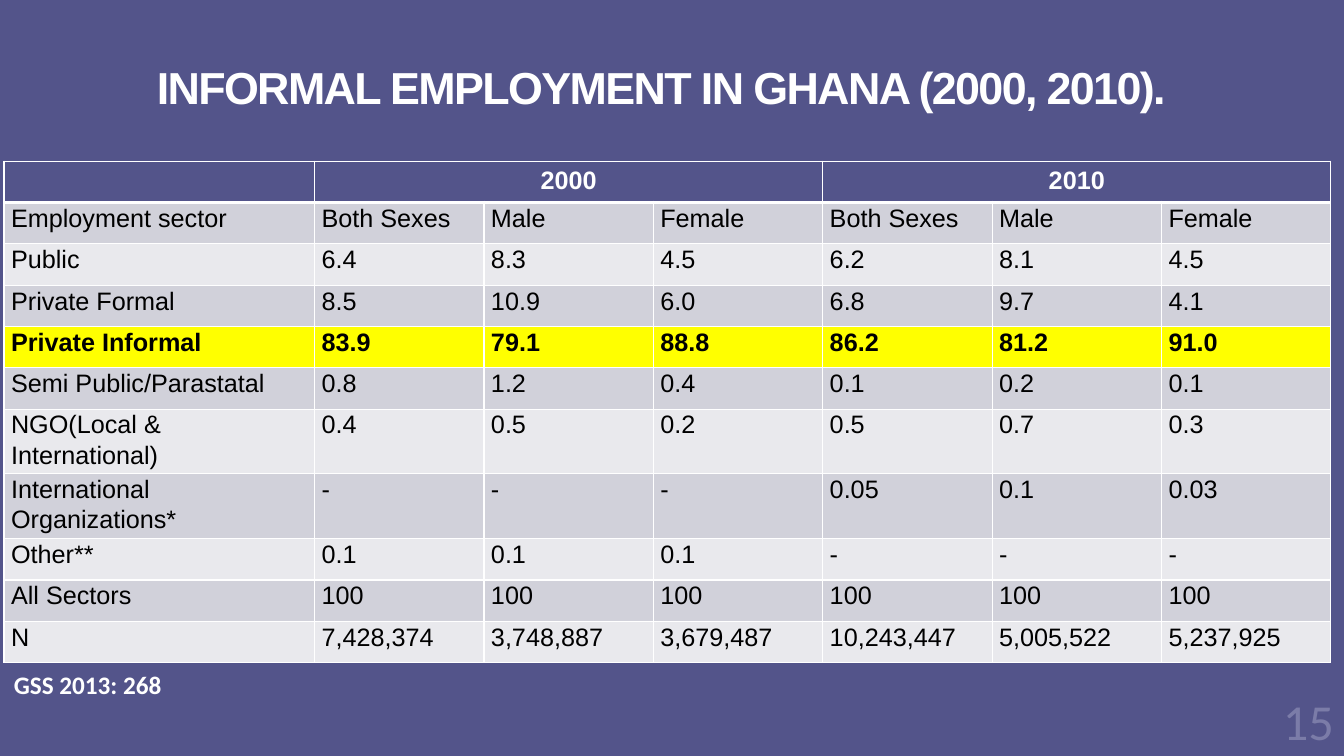
from lxml import etree
from pptx import Presentation
from pptx.dml import color
from pptx.enum import text
from pptx.oxml import ns
from pptx.util import Inches, Pt

WIDTH, HEIGHT = 13.33, 7.5
COLOURS = {
    "page": "53548A",
    "white": "FFFFFF",
    "black": "000000",
    "dark band": "D1D1DA",
    "light band": "E9E9ED",
    "highlight": "FFFF00",
    "number": "7B7CA8",
}
YEARS = ("2000", "2010")
GROUPS = ("Both Sexes", "Male", "Female")
SECTORS = [
    ("Employment sector", *GROUPS, *GROUPS),
    ("Public", "6.4", "8.3", "4.5", "6.2", "8.1", "4.5"),
    ("Private Formal", "8.5", "10.9", "6.0", "6.8", "9.7", "4.1"),
    ("Private Informal", "83.9", "79.1", "88.8", "86.2", "81.2", "91.0"),
    ("Semi Public/Parastatal", "0.8", "1.2", "0.4", "0.1", "0.2", "0.1"),
    ("NGO(Local & International)", "0.4", "0.5", "0.2", "0.5", "0.7", "0.3"),
    ("International Organizations*", "-", "-", "-", "0.05", "0.1", "0.03"),
    ("Other**", "0.1", "0.1", "0.1", "-", "-", "-"),
    ("All Sectors", *["100"] * 6),
    ("N", "7,428,374", "3,748,887", "3,679,487",
     "10,243,447", "5,005,522", "5,237,925"),
]
KEY_SECTOR = "Private Informal"
SECTOR_WIDTH, VALUE_WIDTH, ROW_HEIGHT = 3.08, 1.68, 0.41


def rgb(name):
    return color.RGBColor.from_string(COLOURS[name])


def add_span(para, words, size, colour, font="Arial", bold=False):
    span = para.add_run()
    span.text = words
    span.font.name = font
    span.font.size = Pt(size)
    span.font.bold = bold
    span.font.color.rgb = rgb(colour)
    return span


def add_label(page, place, words, size, colour, font, bold=True,
              align=text.PP_ALIGN.LEFT, anchor=text.MSO_ANCHOR.TOP, wrap=True):
    box = page.shapes.add_textbox(*map(Inches, place))
    frame = box.text_frame
    frame.word_wrap = wrap
    frame.vertical_anchor = anchor
    para = frame.paragraphs[0]
    para.alignment = align
    return para, add_span(para, words, size, colour, font, bold)


def set_borders(cell, top=1, bottom=1):
    properties = cell._tc.get_or_add_tcPr()
    widths = {"a:lnL": 1, "a:lnR": 1, "a:lnT": top, "a:lnB": bottom}
    for place, (side, width) in enumerate(widths.items()):
        line = etree.Element(ns.qn(side), w=str(Pt(width)))
        fill = etree.SubElement(line, ns.qn("a:solidFill"))
        etree.SubElement(fill, ns.qn("a:srgbClr"), val=COLOURS["white"])
        properties.insert(place, line)


def paint_cell(cell, fill, **borders):
    cell.fill.solid()
    cell.fill.fore_color.rgb = rgb(fill)
    set_borders(cell, **borders)


def fill_header(table):
    for cell in table.rows[0].cells:
        paint_cell(cell, "page", bottom=3)
    for index, year in enumerate(YEARS):
        first = 1 + index * len(GROUPS)
        cell = table.cell(0, first)
        cell.merge(table.cell(0, first + len(GROUPS) - 1))
        para = cell.text_frame.paragraphs[0]
        para.alignment = text.PP_ALIGN.CENTER
        add_span(para, year, 18, "white", bold=True)


def fill_sector(table, row, values):
    is_key = values[0] == KEY_SECTOR
    band = "dark band" if row % 2 else "light band"
    for column, value in enumerate(values):
        cell = table.cell(row, column)
        paint_cell(cell, "highlight" if is_key else band,
                   top=3 if row == 1 else 1)
        cell.margin_left = cell.margin_right = Inches(0.07)
        cell.margin_top = cell.margin_bottom = 0
        para = cell.text_frame.paragraphs[0]
        para.line_spacing = 1.07
        add_span(para, value, 18, "black", bold=is_key)


def add_employment_table(page, left, top):
    rows, columns = len(SECTORS) + 1, len(SECTORS[0])
    width = SECTOR_WIDTH + VALUE_WIDTH * (columns - 1)
    place = (left, top, width, ROW_HEIGHT * rows)
    table = page.shapes.add_table(rows, columns, *map(Inches, place)).table
    for index, column in enumerate(table.columns):
        column.width = Inches(VALUE_WIDTH if index else SECTOR_WIDTH)
    fill_header(table)
    for row, values in enumerate(SECTORS, start=1):
        fill_sector(table, row, values)


def main():
    deck = Presentation()
    deck.slide_width, deck.slide_height = Inches(WIDTH), Inches(HEIGHT)
    page = deck.slides.add_slide(deck.slide_layouts[6])
    page.background.fill.solid()
    page.background.fill.fore_color.rgb = rgb("page")

    # Title
    para, span = add_label(
        page, (0.72, 0, 11.78, 1.81),
        "INFORMAL EMPLOYMENT IN GHANA (2000, 2010). ", 32, "white", "Arial",
        align=text.PP_ALIGN.CENTER, anchor=text.MSO_ANCHOR.MIDDLE)
    para.line_spacing = 0.85
    span.font._element.set("spc", "-120")

    # Employment by sector, year and sex
    add_employment_table(page, 0.04, 1.6)

    # Source and page number
    add_label(page, (0.04, 6.59, 1.67, 0.71), "GSS 2013: 268", 18, "white",
              "Calibri", wrap=False)
    add_label(page, (WIDTH - 1.5, 6.8, 1.5, 0.7), "15", 36, "number",
              "Calibri", bold=False, align=text.PP_ALIGN.RIGHT,
              anchor=text.MSO_ANCHOR.MIDDLE)
    deck.save("out.pptx")


if __name__ == "__main__":
    main()
